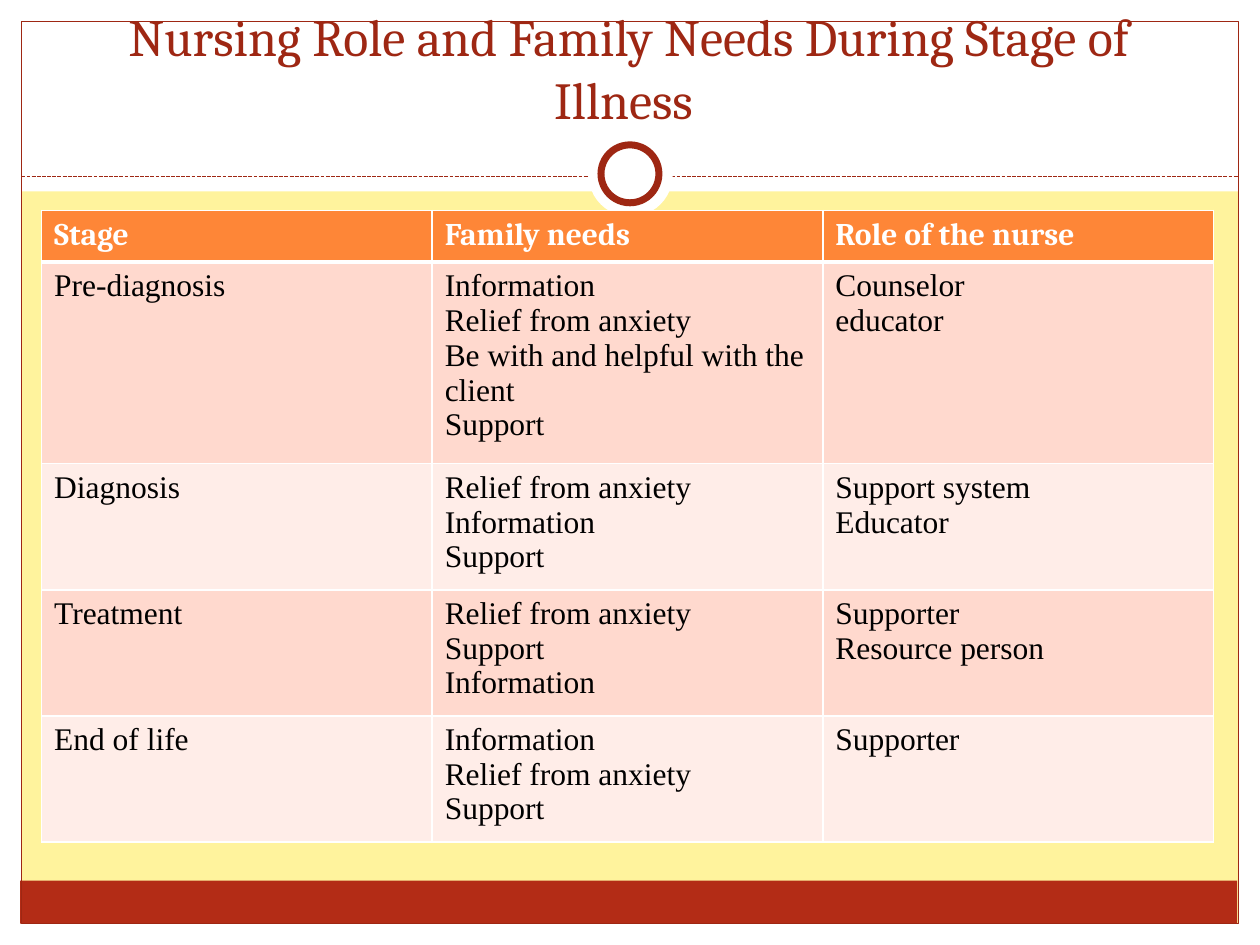
from pptx import Presentation
from pptx.dml.color import RGBColor
from pptx.enum.dml import MSO_LINE
from pptx.enum.shapes import MSO_CONNECTOR, MSO_SHAPE
from pptx.enum.text import MSO_ANCHOR, PP_ALIGN
from pptx.oxml import parse_xml
from pptx.oxml.ns import nsdecls, qn
from pptx.util import Inches, Pt
from lxml.etree import SubElement

WHITE = RGBColor(0xFF, 0xFF, 0xFF)
BLACK = RGBColor(0x00, 0x00, 0x00)
YELLOW = RGBColor(0xFF, 0xF3, 0x9D)
BRICK = RGBColor(0xB3, 0x2C, 0x16)
DARK_RED = RGBColor(0x9E, 0x27, 0x13)
ORANGE = RGBColor(0xFE, 0x86, 0x37)
PEACH = RGBColor(0xFF, 0xD9, 0xCE)
PALE_PEACH = RGBColor(0xFF, 0xED, 0xE8)


def add_panel(kind, left, top, width, height, fill=None, line_width=None):
    panel = slide.shapes.add_shape(
        kind, Inches(left), Inches(top), Inches(width), Inches(height))
    panel.shadow.inherit = False
    if fill is None:
        panel.fill.background()
    else:
        panel.fill.solid()
        panel.fill.fore_color.rgb = fill
    if line_width is None:
        panel.line.fill.background()
    else:
        panel.line.color.rgb = DARK_RED
        panel.line.width = Pt(line_width)


def add_borders(cell, bottom_width):
    properties = cell._tc.get_or_add_tcPr()
    sides = [("lnL", 1), ("lnR", 1), ("lnT", 1), ("lnB", bottom_width)]
    for position, (side, width) in enumerate(sides):
        properties.insert(position, parse_xml(
            f'<a:{side} {nsdecls("a")} w="{Pt(width)}"><a:solidFill>'
            f'<a:srgbClr val="{WHITE}"/></a:solidFill></a:{side}>'))


prs = Presentation()
prs.slide_width = Inches(10)
prs.slide_height = Inches(7.5)
slide = prs.slides.add_slide(prs.slide_layouts[6])
slide.background.fill.solid()
slide.background.fill.fore_color.rgb = YELLOW

add_panel(MSO_SHAPE.RECTANGLE, 0, 7.33, 10, 0.17, WHITE)
add_panel(MSO_SHAPE.RECTANGLE, 0, 0, 10, 1.52, WHITE)
add_panel(MSO_SHAPE.RECTANGLE, 0, 0, 0.17, 7.5, WHITE)
add_panel(MSO_SHAPE.RECTANGLE, 9.83, 0, 0.17, 7.5, WHITE)
add_panel(MSO_SHAPE.RECTANGLE, 0.16, 6.99, 9.66, 0.34, BRICK)
add_panel(MSO_SHAPE.RECTANGLE, 0.17, 0.17, 9.66, 7.16, line_width=0.75)

divider = slide.shapes.add_connector(
    MSO_CONNECTOR.STRAIGHT, Inches(0.17), Inches(1.4), Inches(9.83), Inches(1.4))
divider.line.color.rgb = DARK_RED
divider.line.width = Pt(0.75)
divider.line.dash_style = MSO_LINE.SQUARE_DOT
SubElement(divider._element.spPr, qn("a:effectLst"))

add_panel(MSO_SHAPE.OVAL, 4.67, 1.05, 0.67, 0.67, WHITE)
add_panel(MSO_SHAPE.OVAL, 4.77, 1.15, 0.46, 0.46, WHITE, 4)

title = slide.shapes.add_textbox(
    Inches(0.33), Inches(0.25), Inches(9.33), Inches(0.83))
title.text_frame.word_wrap = True
title.text_frame.vertical_anchor = MSO_ANCHOR.BOTTOM
title.text_frame.text = "Nursing Role and Family Needs During Stage of Illness "
heading = title.text_frame.paragraphs[0]
heading.alignment = PP_ALIGN.CENTER
heading.font.size = Pt(29.7)
heading.font.name = "Cambria"
heading.font.color.rgb = DARK_RED

stages = [
    ("Stage", "Family needs", "Role of the nurse"),
    ("Pre-diagnosis",
     "Information\nRelief from anxiety\nBe with and helpful with the client\nSupport",
     "Counselor\neducator"),
    ("Diagnosis", "Relief from anxiety\nInformation\nSupport",
     "Support system\nEducator"),
    ("Treatment", "Relief from anxiety\nSupport\nInformation",
     "Supporter\nResource person"),
    ("End of life", "Information\nRelief from anxiety\nSupport", "Supporter"),
]
row_heights = [0.41, 1.48, 0.93, 0.93, 0.93]
care_table = slide.shapes.add_table(
    len(stages), 3, Inches(0.33), Inches(1.67),
    Inches(9.3), Inches(sum(row_heights))).table
for column in care_table.columns:
    column.width = Inches(3.1)

for row_index, (stage, height) in enumerate(zip(stages, row_heights)):
    care_table.rows[row_index].height = Inches(height)
    is_header = row_index == 0
    if is_header:
        row_fill = ORANGE
    else:
        row_fill = PEACH if row_index % 2 else PALE_PEACH
    for column_index, wording in enumerate(stage):
        cell = care_table.cell(row_index, column_index)
        cell.text_frame.text = wording
        cell.fill.solid()
        cell.fill.fore_color.rgb = row_fill
        add_borders(cell, 3 if is_header else 1)
        for paragraph in cell.text_frame.paragraphs:
            for run in paragraph.runs:
                run.font.size = Pt(18)
                run.font.name = "Cambria" if is_header else "Times New Roman"
                run.font.bold = is_header
                run.font.color.rgb = WHITE if is_header else BLACK

prs.save("out.pptx")
